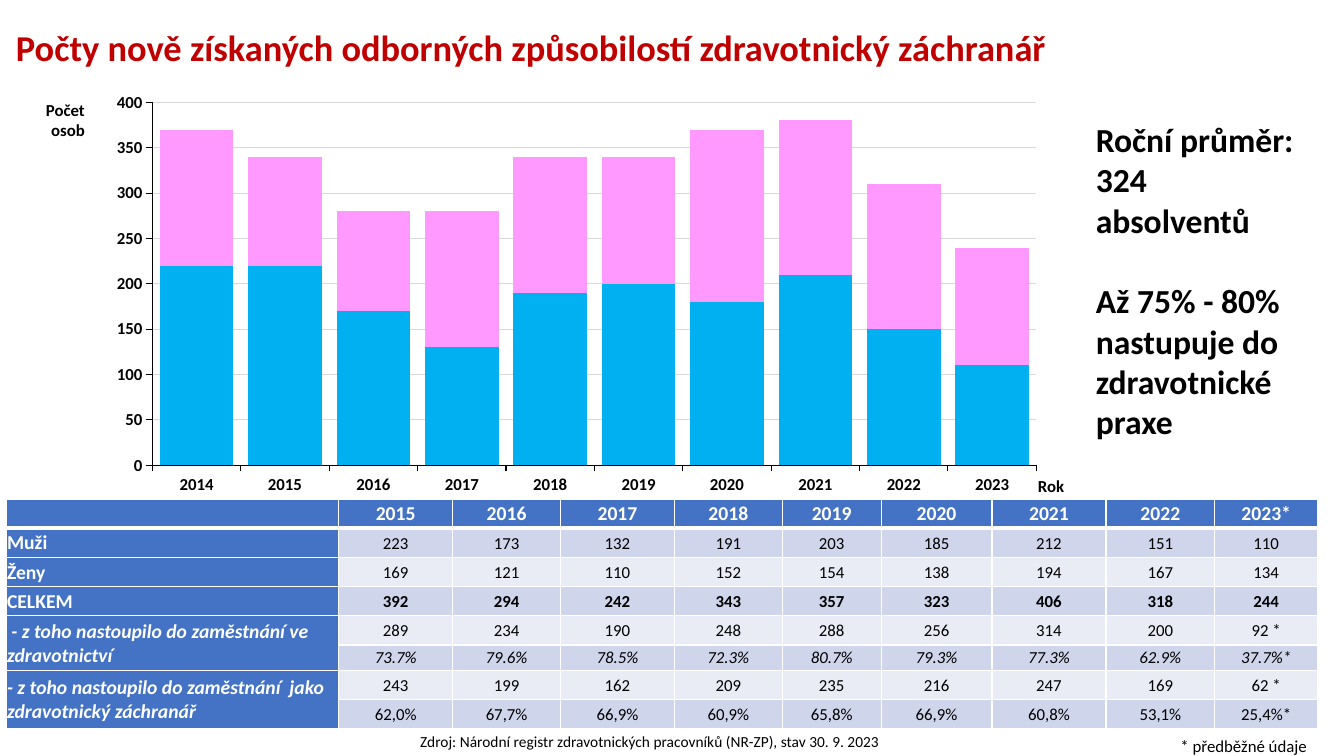
from lxml.etree import SubElement
from pptx import Presentation
from pptx.chart.data import CategoryChartData
from pptx.dml.color import RGBColor
from pptx.enum.chart import XL_CHART_TYPE as ChartType, XL_TICK_MARK as Tick
from pptx.enum.text import MSO_ANCHOR as Anchor, MSO_AUTO_SIZE as AutoSize, PP_ALIGN as Align
from pptx.oxml import parse_xml
from pptx.oxml.ns import nsdecls, qn
from pptx.util import Inches, Pt

FONT = "Calibri"
BLACK, WHITE, RED, HEADER_BLUE = "000000", "FFFFFF", "C00000", "4472C4"
BANDS = ["CFD5EA", "E9EBF5"]

YEARS = [str(year) for year in range(2014, 2024)]
SERIES = [
    ("Series 1", "00B0F0", [220, 220, 170, 130, 190, 200, 180, 210, 150, 110]),
    ("Series 2", "FF99FF", [150, 120, 110, 150, 150, 140, 190, 170, 160, 130]),
]
PLOT_LAYOUT = {"x": 0.06, "y": 0.04, "w": 0.92, "h": 0.87}

COLUMN_WIDTHS = [3.3, 1.13, 1.07, 1.13, 1.07, 0.98, 1.1, 1.13, 1.08, 1.02]
ROW_HEIGHTS = [0.29, 0.29, 0.29, 0.29, 0.29, 0.25, 0.29, 0.29]
TABLE_ROWS = [
    ["", "2015", "2016", "2017", "2018", "2019", "2020", "2021", "2022", "2023*"],
    ["Muži", "223", "173", "132", "191", "203", "185", "212", "151", "110"],
    ["Ženy", "169", "121", "110", "152", "154", "138", "194", "167", "134"],
    ["CELKEM", "392", "294", "242", "343", "357", "323", "406", "318", "244"],
    [" - z toho nastoupilo do zaměstnání ve zdravotnictví",
     "289", "234", "190", "248", "288", "256", "314", "200", "92 *"],
    ["", "73.7%", "79.6%", "78.5%", "72.3%", "80.7%", "79.3%", "77.3%", "62.9%", "37.7%*"],
    ["- z toho nastoupilo do zaměstnání  jako zdravotnický záchranář",
     "243", "199", "162", "209", "235", "216", "247", "169", "62 *"],
    ["", "62,0%", "67,7%", "66,9%", "60,9%", "65,8%", "66,9%", "60,8%", "53,1%", "25,4%*"],
]
TOTAL_ROW, PERCENT_ROW = 3, 5
MERGED_ROWS = [4, 6]


def rgb(color):
    return RGBColor.from_string(color)


def write(para, text, size=12, color=BLACK, bold=False, italic=False, align=Align.LEFT):
    """Fill a paragraph; an empty one only gets its text size."""
    para.alignment = align
    if not text:
        para._p.get_or_add_endParaRPr().set("sz", str(size * 100))
        return
    span = para.add_run()
    span.text = text
    font = span.font
    font.name, font.size, font.bold, font.italic = FONT, Pt(size), bold, italic
    font.color.rgb = rgb(color)


def add_text(page, area, *texts, wrap=True, grow=True, gap=0, line_spacing=None, **style):
    box = page.shapes.add_textbox(*map(Inches, area))
    frame = box.text_frame
    frame.word_wrap = wrap
    frame.auto_size = AutoSize.SHAPE_TO_FIT_TEXT if grow else AutoSize.NONE
    for index, text in enumerate(texts):
        para = frame.add_paragraph() if index else frame.paragraphs[0]
        if index:
            para.space_before = Pt(gap)
        if line_spacing:
            para.line_spacing = line_spacing
        write(para, text, **style)


def style_axis(axis):
    axis.major_tick_mark, axis.minor_tick_mark = Tick.OUTSIDE, Tick.NONE
    axis.format.line.color.rgb = rgb(BLACK)
    axis.format.line.width = Pt(0.75)
    font = axis.tick_labels.font
    font.name, font.size, font.bold = FONT, Pt(12), True
    font.color.rgb = rgb(BLACK)


def set_plot_layout(chart):
    plot_area = chart._chartSpace.chart.plotArea
    for old in plot_area.findall(qn("c:layout")):
        plot_area.remove(old)
    layout = parse_xml(f"<c:layout {nsdecls('c')}><c:manualLayout/></c:layout>")
    settings = {"layoutTarget": "inner", "xMode": "edge", "yMode": "edge", **PLOT_LAYOUT}
    for name, value in settings.items():
        SubElement(layout[0], qn(f"c:{name}")).set("val", str(value))
    plot_area.insert(0, layout)


def add_graduates_chart(page, area):
    data = CategoryChartData()
    data.categories = YEARS
    for name, _, values in SERIES:
        data.add_series(name, values)
    chart = page.shapes.add_chart(ChartType.COLUMN_STACKED, *map(Inches, area), data).chart
    chart.has_legend = chart.has_title = False
    chart.font.name, chart.font.size = FONT, Pt(12)
    chart.font.color.rgb = rgb(BLACK)

    plot = chart.plots[0]
    plot.gap_width, plot.overlap, plot.vary_by_categories = 20, 100, False
    for series, (_, color, _) in zip(plot.series, SERIES):
        series.format.fill.solid()
        series.format.fill.fore_color.rgb = rgb(color)

    style_axis(chart.category_axis)
    counts = chart.value_axis
    style_axis(counts)
    counts.minimum_scale, counts.maximum_scale, counts.major_unit = 0, 400, 50
    counts.tick_labels.number_format = "#,##0"
    counts.tick_labels.number_format_is_linked = False
    counts.major_gridlines.format.line.color.rgb = rgb("D9D9D9")
    counts.major_gridlines.format.line.width = Pt(0.75)
    set_plot_layout(chart)


def style_cell(cell, fill, bottom_width):
    cell.vertical_anchor = Anchor.MIDDLE
    cell.margin_left = cell.margin_right = cell.margin_top = Inches(0.01)
    cell.margin_bottom = 0
    properties = cell._tc.get_or_add_tcPr()
    for side, width in zip("LRTB", (1, 1, 1, bottom_width)):
        properties.append(parse_xml(
            f'<a:ln{side} {nsdecls("a")} w="{Pt(width)}"><a:solidFill>'
            f'<a:srgbClr val="{WHITE}"/></a:solidFill></a:ln{side}>'))
    cell.fill.solid()
    cell.fill.fore_color.rgb = rgb(fill)


def add_counts_table(page, area):
    table = page.shapes.add_table(
        len(ROW_HEIGHTS), len(COLUMN_WIDTHS), *map(Inches, area)).table
    for column, width in zip(table.columns, COLUMN_WIDTHS):
        column.width = Inches(width)
    for row, height in zip(table.rows, ROW_HEIGHTS):
        row.height = Inches(height)

    for r, texts in enumerate(TABLE_ROWS):
        for c, text in enumerate(texts):
            cell = table.cell(r, c)
            heading = r == 0 or c == 0
            style_cell(cell, HEADER_BLUE if heading else BANDS[(r - 1) % 2], 1 if r else 3)
            write(cell.text_frame.paragraphs[0], text,
                  size=14 if heading and text else 12,
                  color=WHITE if heading else BLACK,
                  bold=heading or r == TOTAL_ROW,
                  italic=r in MERGED_ROWS if c == 0 else r == PERCENT_ROW,
                  align=Align.CENTER if c else Align.LEFT)
    for r in MERGED_ROWS:
        table.cell(r, 0).merge(table.cell(r + 1, 0))


def main():
    deck = Presentation()
    deck.slide_width, deck.slide_height = Inches(13.33), Inches(7.5)
    page = deck.slides.add_slide(deck.slide_layouts[6])

    add_text(page, (0.06, 0.25, 12.9, 0.62),
             "Počty nově získaných odborných způsobilostí zdravotnický záchranář",
             grow=False, line_spacing=0.9, size=26, color=RED, bold=True)
    add_text(page, (1.97, 7.21, 8.95, 0.29),
             "Zdroj: Národní registr zdravotnických pracovníků (NR-ZP), stav 30. 9. 2023",
             size=11, align=Align.CENTER)
    add_graduates_chart(page, (0.94, 0.85, 9.53, 4.14))
    add_text(page, (0.27, 0.94, 0.67, 0.5), "Počet osob", bold=True, align=Align.RIGHT)
    add_text(page, (10.19, 4.67, 0.47, 0.3), "Rok", wrap=False, bold=True, align=Align.CENTER)
    add_counts_table(page, (0.06, 4.95, 13, 2.3))
    add_text(page, (11.61, 7.25, 1.46, 0.3), "* předběžné údaje")
    add_text(page, (10.77, 1.13, 2.29, 3.33),
             "Roční průměr: 324 absolventů",
             "Až 75% - 80% nastupuje do zdravotnické praxe",
             gap=29, size=24, bold=True)
    deck.save("out.pptx")


if __name__ == "__main__":
    main()
